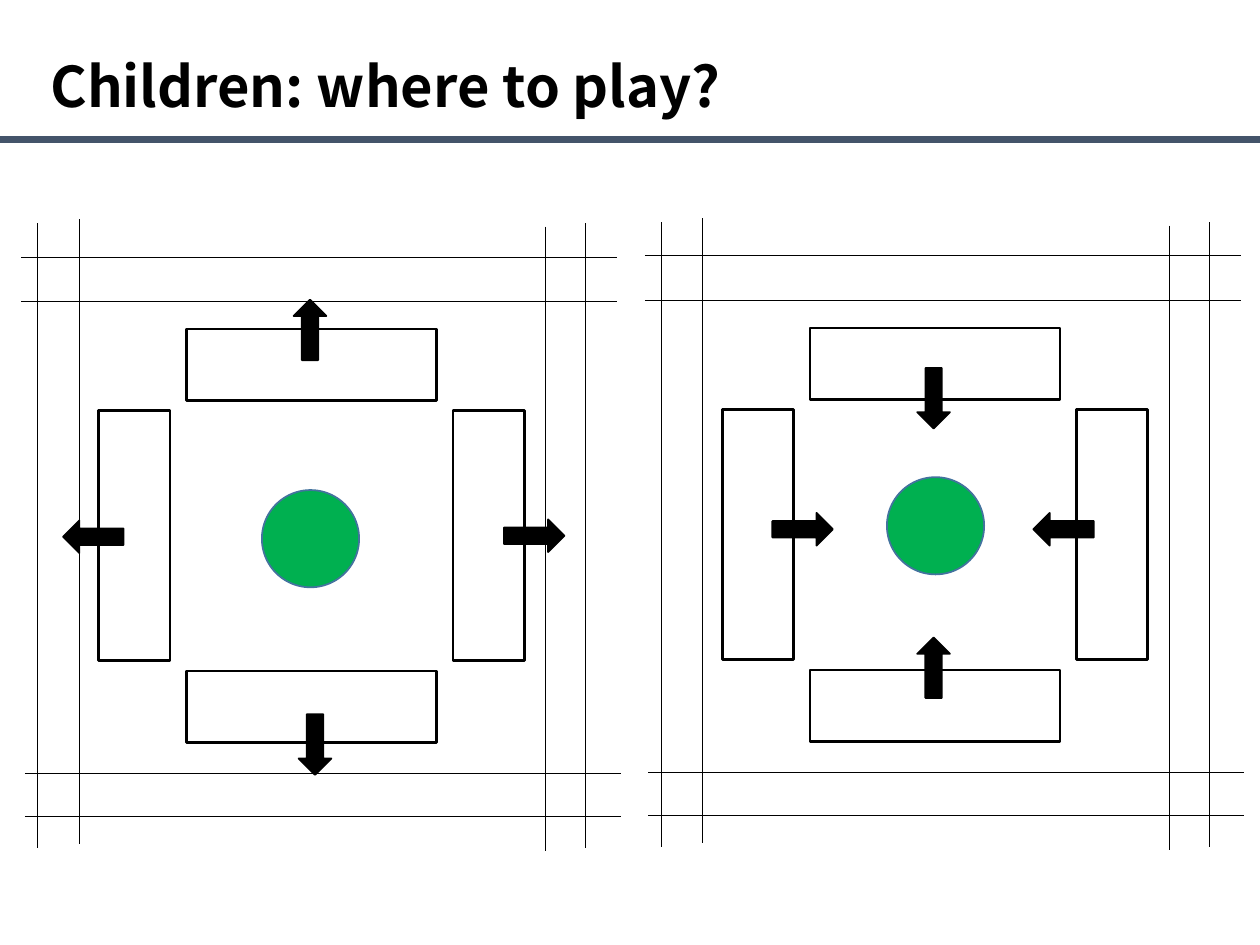
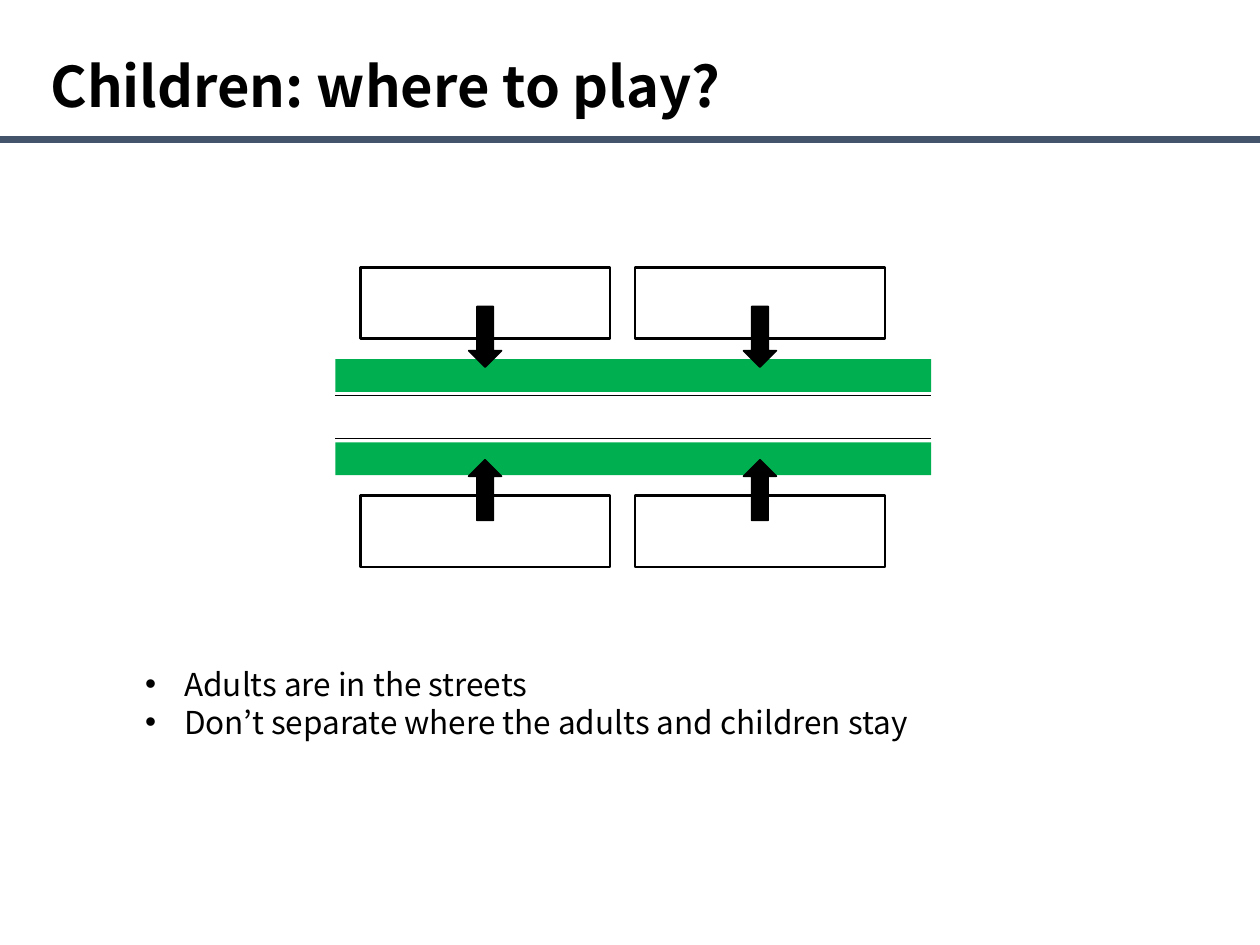
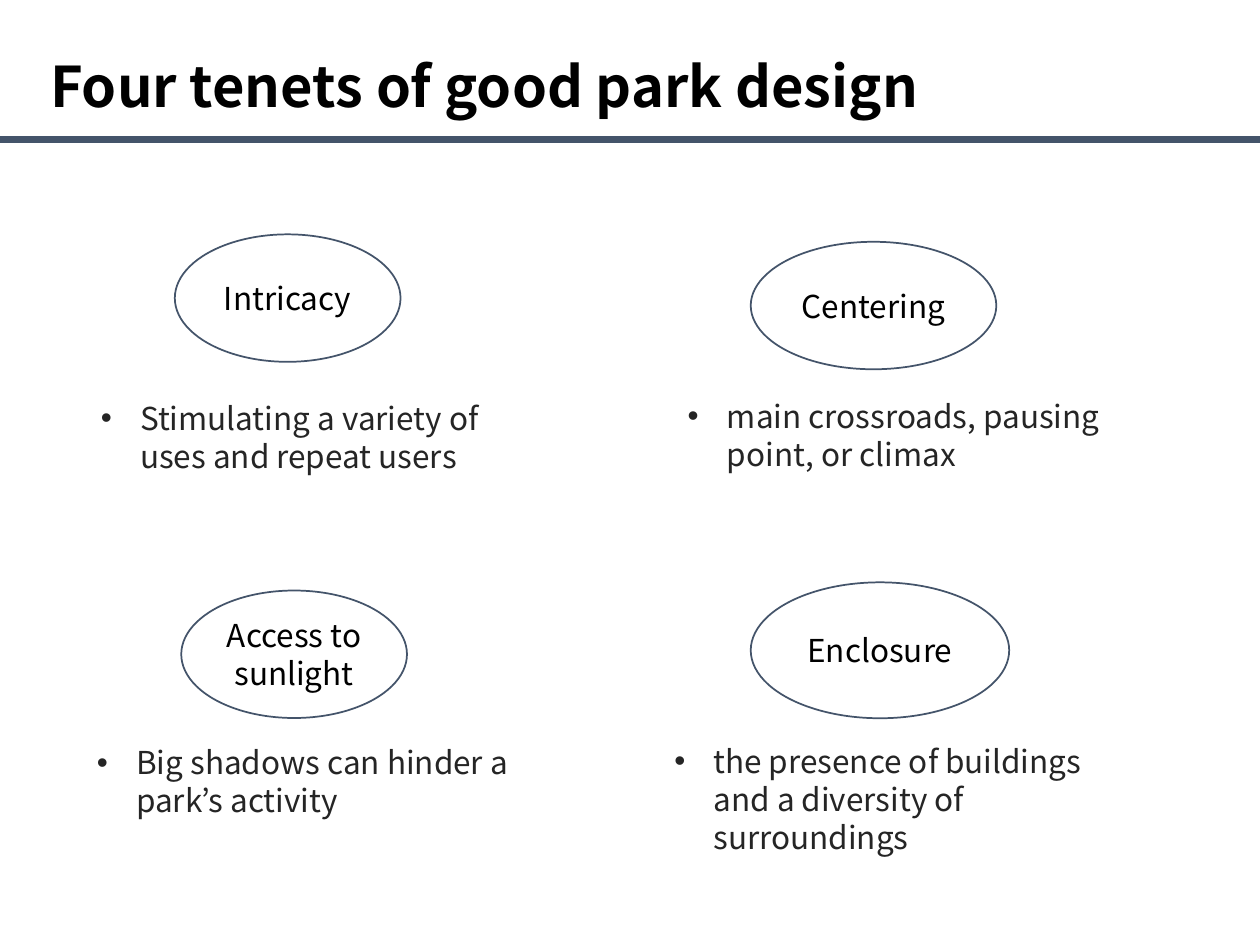
import pptx
import pptx.dml.color
import pptx.enum.shapes
import pptx.enum.text
import pptx.oxml.ns
import pptx.util
from lxml import etree

Cm = pptx.util.Cm
Pt = pptx.util.Pt
SHAPE = pptx.enum.shapes.MSO_SHAPE
FONT = "Noto Sans CJK KR"
COLORS = {"ink": "000000", "note": "252525", "slate": "44546A",
          "green": "00B050", "rim": "43739E"}
BLOCK = (1.44, 5.04)
ARROW = (1.22, 0.66)
ROAD_LENGTH = 12.01
STREET_LENGTH = 12.59


def rgb(name):
    return pptx.dml.color.RGBColor.from_string(COLORS[name])


def add_figure(slide, kind, center, size, fill=None, line=None, weight=1, rotation=0):
    """Draw a preset shape around its center; lengths in centimetres."""
    width, height = size
    shape = slide.shapes.add_shape(kind, Cm(center[0] - width / 2), Cm(center[1] - height / 2),
                                   Cm(width), Cm(height))
    shape.rotation = rotation
    shape.shadow.inherit = False
    if fill:
        shape.fill.solid()
        shape.fill.fore_color.rgb = rgb(fill)
    else:
        shape.fill.background()
    if line:
        shape.line.color.rgb = rgb(line)
        shape.line.width = Pt(weight)
    else:
        shape.line.fill.background()
    return shape


deck = pptx.Presentation()
deck.slide_width, deck.slide_height = Cm(25.4), Cm(19.05)

# Slides with their titles; the layouts are Title Only, Title and Content, Comparison
slides = []
rules = []  # slide, start x, start y, end x, end y, color, weight
for text, layout, width in [("Children: where to play?", 5, 19.69),
                            ("Children: where to play?", 1, 19.69),
                            ("Four tenets of good park design", 4, 21.39)]:
    slide = deck.slides.add_slide(deck.slide_layouts[layout])
    slides.append(slide)
    title = slide.shapes.title
    title.left, title.top, title.width, title.height = Cm(0.76), Cm(0.91), Cm(width), Cm(1.63)
    frame = title.text_frame
    frame.text = text
    frame.auto_size = pptx.enum.text.MSO_AUTO_SIZE.SHAPE_TO_FIT_TEXT
    frame.vertical_anchor = pptx.enum.text.MSO_ANCHOR.TOP
    para = frame.paragraphs[0]
    para.alignment = pptx.enum.text.PP_ALIGN.LEFT
    font = para.runs[0].font
    font.name, font.size, font.bold = FONT, Pt(32), True
    font.color.rgb = rgb("ink")
    rules.append((slide, 0, 2.82, 25.4, 2.82, "slate", 4))
play_slide, street_slide, tenets_slide = slides

# Two courtyards: arrows lead out to the roads, or in to the green
courtyards = [
    ((6.28, 10.8), (-0.02, 0.06),
     [(-0.03, -4.15, 270), (0.07, 4.21, 90), (-4.4, 0.02, 180), (4.49, 0, 0)]),
    ((18.85, 10.78), (0.01, -0.18),
     [(-2.67, -0.11, 0), (2.59, -0.11, 180), (-0.03, -2.75, 90), (-0.03, 2.68, 270)]),
]
for (x, y), (green_dx, green_dy), arrows in courtyards:
    for dx, dy, rotation in [(-3.57, 0, 0), (3.57, 0, 0), (0, -3.45, 90), (0, 3.45, 90)]:
        add_figure(play_slide, SHAPE.RECTANGLE, (x + dx, y + dy), BLOCK,
                   line="ink", weight=1.5, rotation=rotation)
    for dx, dy in [(-5.85, -5.62), (-5.85, -4.73), (-5.78, 4.8), (-5.78, 5.66)]:
        rules.append((play_slide, x + dx, y + dy, x + dx + ROAD_LENGTH, y + dy, "ink", 0.5))
    for dx, dy in [(-4.68, -6.38), (-5.52, -6.3), (5.53, -6.3), (4.72, -6.23)]:
        rules.append((play_slide, x + dx, y + dy, x + dx, y + dy + STREET_LENGTH, "ink", 0.5))
    for dx, dy, rotation in arrows:
        add_figure(play_slide, SHAPE.RIGHT_ARROW, (x + dx, y + dy), ARROW,
                   "ink", "ink", rotation=rotation)
    add_figure(play_slide, SHAPE.OVAL, (x + green_dx, y + green_dy), (1.96, 1.96), "green", "rim")

# A street between two green strips, with blocks facing it
street_left = 6.76
for block_y, strip_y, kerb_y, arrow_y, rotation in [(6.11, 7.57, 7.98, 6.79, 90),
                                                   (10.71, 9.25, 8.84, 9.88, 270)]:
    rules.append((street_slide, street_left, kerb_y, street_left + ROAD_LENGTH, kerb_y, "ink", 0.5))
    add_figure(street_slide, SHAPE.RECTANGLE, (street_left + ROAD_LENGTH / 2, strip_y),
               (ROAD_LENGTH, 0.66), "green")
    for x in (9.78, 15.32):
        add_figure(street_slide, SHAPE.RECTANGLE, (x, block_y), BLOCK,
                   line="ink", weight=1.5, rotation=90)
        add_figure(street_slide, SHAPE.RIGHT_ARROW, (x, arrow_y), ARROW,
                   "ink", "ink", rotation=rotation)

# Tenets: name, ellipse center and size, note, note position and width
notes = [(street_slide.placeholders[1], (2.67, 13.28), 20.07, "ink",
          ["Adults are in the streets", "Don’t separate where the adults and children stay"])]
tenets = [
    ("Intricacy", (5.8, 6.01), (4.55, 2.57),
     "Stimulating a variety of uses and repeat users", (1.78, 7.92), 9.12),
    ("Centering", (17.61, 6.16), (4.95, 2.57),
     "main crossroads, pausing point, or climax", (13.61, 7.87), 9.98),
    ("Access to sunlight", (5.93, 13.19), (4.55, 2.57),
     "Big shadows can hinder a park’s activity", (1.7, 14.86), 9.19),
    ("Enclosure", (17.74, 13.11), (5.21, 2.74),
     "the presence of buildings and a diversity of surroundings", (13.34, 14.83), 9.96),
]
for index, (name, center, size, note, corner, width) in enumerate(tenets, start=1):
    ellipse = add_figure(tenets_slide, SHAPE.OVAL, center, size, line="slate")
    ellipse.text_frame.text = name
    para = ellipse.text_frame.paragraphs[0]
    para.alignment = pptx.enum.text.PP_ALIGN.CENTER
    font = para.runs[0].font
    font.name, font.size = FONT, Pt(18)
    font.color.rgb = rgb("ink")
    notes.append((tenets_slide.placeholders[index], corner, width, "note", [note]))

# Bulleted notes
for box, (left, top), width, color, lines in notes:
    box.left, box.top, box.width, box.height = Cm(left), Cm(top), Cm(width), Cm(1.8)
    frame = box.text_frame
    frame.text = "\n".join(lines)
    frame.auto_size = pptx.enum.text.MSO_AUTO_SIZE.SHAPE_TO_FIT_TEXT
    frame.vertical_anchor = pptx.enum.text.MSO_ANCHOR.TOP
    for para in frame.paragraphs:
        para.space_before = Pt(0)
        properties = para._p.get_or_add_pPr()
        properties.set("marL", str(Cm(0.79)))
        properties.set("indent", str(-Cm(0.79)))
        bullet_font = etree.SubElement(properties, pptx.oxml.ns.qn("a:buFont"))
        bullet_font.set("typeface", "Arial")
        etree.SubElement(properties, pptx.oxml.ns.qn("a:buChar")).set("char", "•")
        font = para.runs[0].font
        font.name, font.size, font.bold = FONT, Pt(18), False
        font.color.rgb = rgb(color)

# Title rules, roads and kerbs
for slide, start_x, start_y, end_x, end_y, color, weight in rules:
    rule = slide.shapes.add_connector(pptx.enum.shapes.MSO_CONNECTOR.STRAIGHT,
                                      Cm(start_x), Cm(start_y), Cm(end_x), Cm(end_y))
    rule.line.color.rgb = rgb(color)
    rule.line.width = Pt(weight)
    etree.SubElement(rule._element.spPr, pptx.oxml.ns.qn("a:effectLst"))

deck.save("out.pptx")
